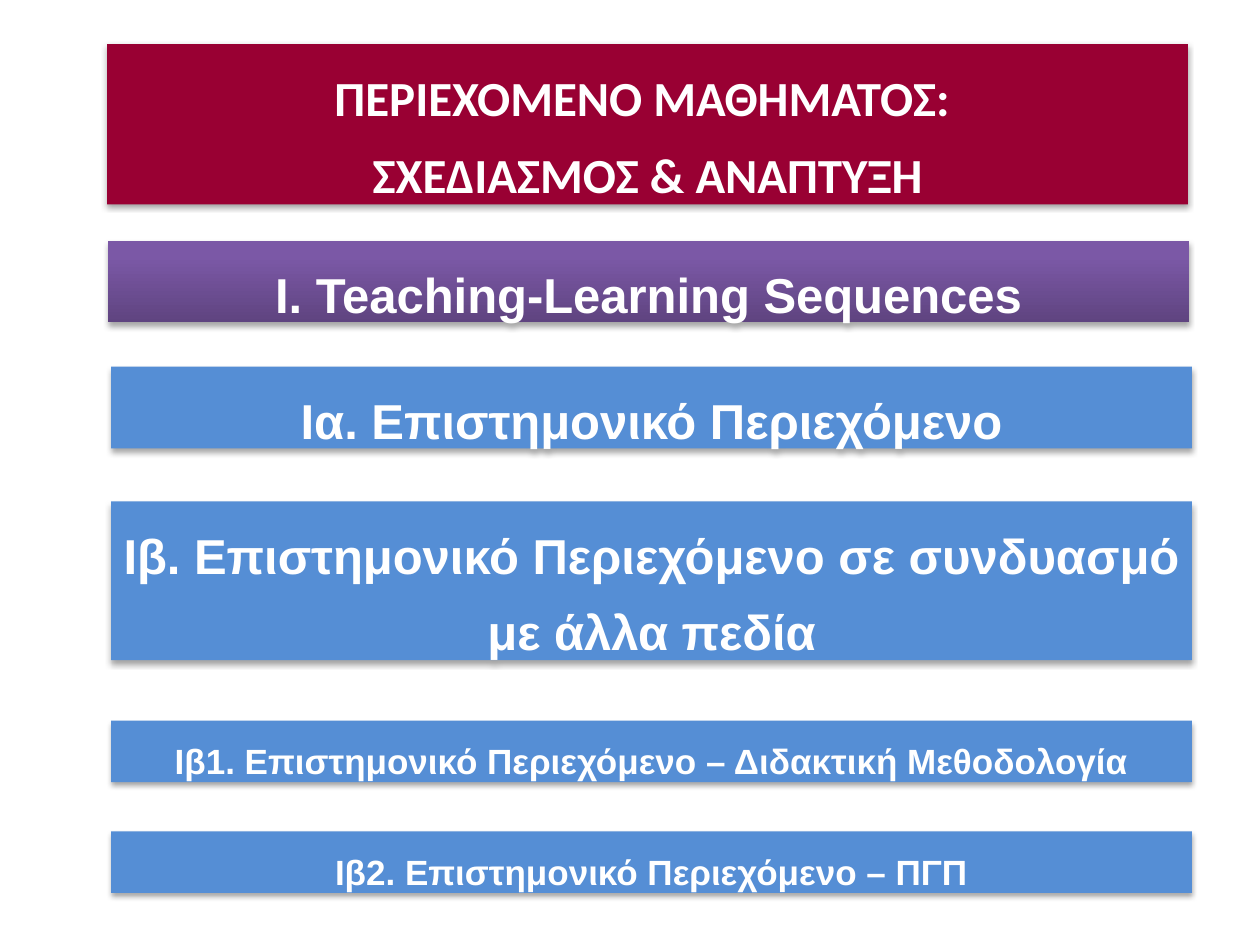
import copy

import pptx
import pptx.dml.color
import pptx.enum.shapes
import pptx.enum.text
import pptx.oxml
import pptx.oxml.ns
import pptx.util

Cm = pptx.util.Cm
RGBColor = pptx.dml.color.RGBColor

WHITE = RGBColor(0xFF, 0xFF, 0xFF)
CRIMSON = RGBColor(0x99, 0x00, 0x33)
BLUE = RGBColor(0x55, 0x8E, 0xD5)
PURPLE_STOPS = [
    (0, RGBColor(0x5F, 0x44, 0x80)),
    (0.8, RGBColor(0x7B, 0x58, 0xA6)),
    (1, RGBColor(0x7C, 0x57, 0xA8)),
]

SHADOW = (
    f'<a:outerShdw {pptx.oxml.ns.nsdecls("a")} blurRad="40000" dist="23000"'
    ' dir="5400000" rotWithShape="0"><a:srgbClr val="000000">'
    '<a:alpha val="35000"/></a:srgbClr></a:outerShdw>'
)


class Deck:
    """Holds the banner style and the current slide."""

    width = Cm(21.79)
    line_spacing = 1.3

    def __init__(self):
        self.prs = pptx.Presentation()
        self.prs.slide_width = Cm(25.4)
        self.prs.slide_height = Cm(19.05)
        self.s = self.prs.slides.add_slide(self.prs.slide_layouts[6])

    def banner(self, text, left, top, height, fill=BLUE, size=28, font="Arial"):
        """Add a shadowed bar; fill is a colour or a list of gradient stops."""
        sp = self.s.shapes.add_shape(
            pptx.enum.shapes.MSO_SHAPE.RECTANGLE,
            Cm(left), Cm(top), self.width, Cm(height))
        sp.line.fill.background()
        if isinstance(fill, list):
            self.gradient(sp, fill)
        else:
            sp.fill.solid()
            sp.fill.fore_color.rgb = fill
        self.shadow(sp)

        tf = sp.text_frame
        tf.text = text
        tf.word_wrap = True
        tf.auto_size = pptx.enum.text.MSO_AUTO_SIZE.SHAPE_TO_FIT_TEXT
        tf.vertical_anchor = pptx.enum.text.MSO_ANCHOR.TOP
        for p in tf.paragraphs:
            p.alignment = pptx.enum.text.PP_ALIGN.CENTER
            p.line_spacing = self.line_spacing
            for r in p.runs:
                r.font.name = font
                r.font.size = pptx.util.Pt(size)
                r.font.bold = True
                r.font.color.rgb = WHITE

    def gradient(self, sp, stops):
        """Fill a shape from bottom to top."""
        sp.fill.gradient()
        sp.fill.gradient_angle = 90
        gs_list = next(sp.element.spPr.iter(pptx.oxml.ns.qn("a:gsLst")))
        while len(gs_list) < len(stops):
            gs_list.append(copy.deepcopy(gs_list[0]))
        for stop, (position, color) in zip(sp.fill.gradient_stops, stops):
            stop.position = position
            stop.color.rgb = color

    def shadow(self, sp):
        sp.shadow.inherit = False
        effects = sp.element.spPr.find(pptx.oxml.ns.qn("a:effectLst"))
        effects.append(pptx.oxml.parse_xml(SHADOW))


def main():
    deck = Deck()
    deck.banner("Ι. Teaching-Learning Sequences", 2.18, 4.85, 1.65, PURPLE_STOPS)
    deck.banner("Ια. Επιστημονικό Περιεχόμενο", 2.24, 7.39, 1.65)
    deck.banner("ΠΕΡΙΕΧΟΜΕΝΟ ΜΑΘΗΜΑΤΟΣ: \nΣΧΕΔΙΑΣΜΟΣ & ΑΝΑΠΤΥΞΗ",
                2.16, 0.89, 3.23, CRIMSON, font="Calibri")
    deck.banner("Ιβ. Επιστημονικό Περιεχόμενο σε συνδυασμό με άλλα πεδία",
                2.24, 10.11, 3.2)
    deck.banner("Ιβ1. Επιστημονικό Περιεχόμενο – Διδακτική Μεθοδολογία",
                2.24, 14.53, 1.24, size=20)
    deck.banner("Ιβ2. Επιστημονικό Περιεχόμενο – ΠΓΠ", 2.24, 16.76, 1.24, size=20)
    deck.prs.save("out.pptx")


if __name__ == "__main__":
    main()
